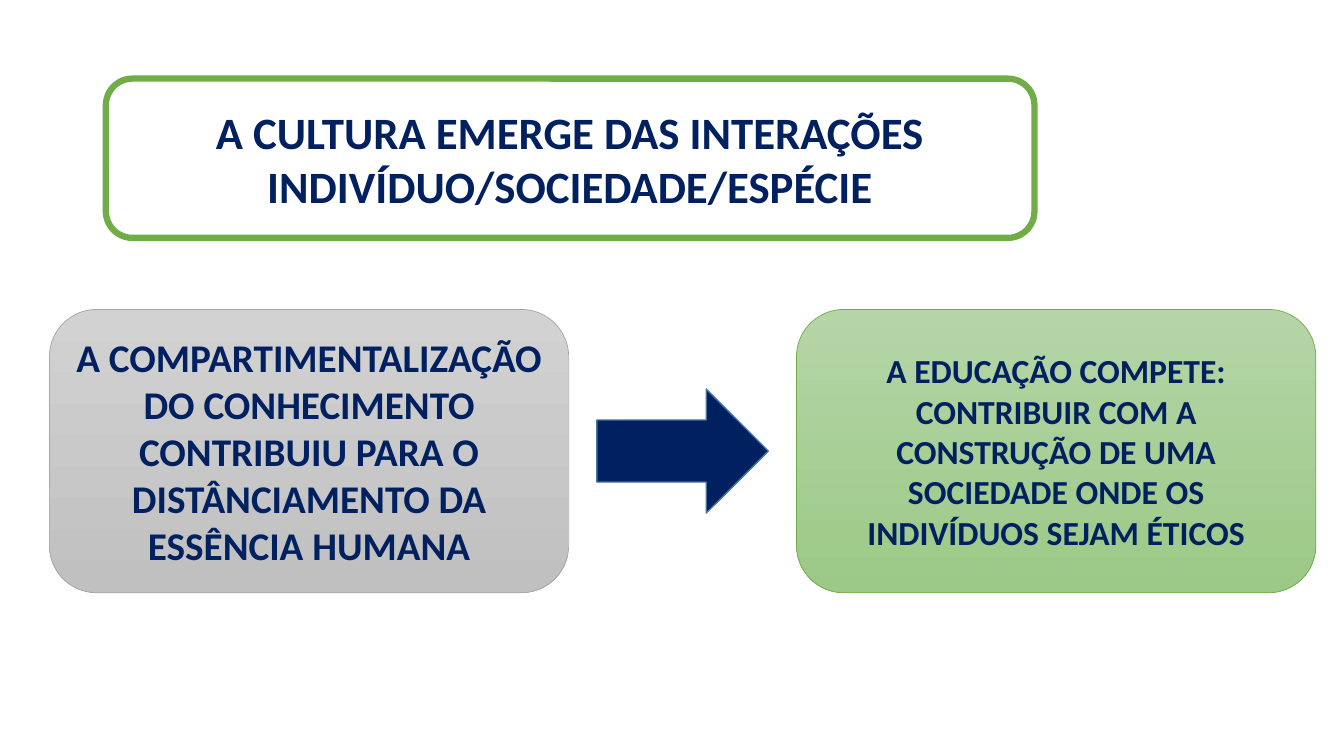
import pptx
import pptx.util
import pptx.dml.color
import pptx.enum.shapes
import pptx.enum.text

Inches = pptx.util.Inches
RGBColor = pptx.dml.color.RGBColor
Shapes = pptx.enum.shapes.MSO_SHAPE

WHITE = RGBColor(0xFF, 0xFF, 0xFF)
NAVY = RGBColor(0x00, 0x20, 0x60)
STEEL = RGBColor(0x43, 0x73, 0x9E)
GREEN = RGBColor(0x70, 0xAD, 0x47)
GREEN_TOP = RGBColor(0xB5, 0xD5, 0xA7)
GREEN_BOTTOM = RGBColor(0x9C, 0xC9, 0x87)
GRAY = RGBColor(0xA5, 0xA5, 0xA5)
GRAY_TOP = RGBColor(0xD2, 0xD2, 0xD2)
GRAY_BOTTOM = RGBColor(0xC0, 0xC0, 0xC0)


def add_shape(slide, kind, box, fills, line_color, line_width):
    """Add a preset shape; two fill colours make a top-to-bottom gradient."""
    shape = slide.shapes.add_shape(kind, *(Inches(length) for length in box))
    shape.shadow.inherit = False
    if len(fills) == 1:
        shape.fill.solid()
        shape.fill.fore_color.rgb = fills[0]
    else:
        shape.fill.gradient()
        shape.fill.gradient_angle = 270
        for stop, color, position in zip(shape.fill.gradient_stops, fills, (0, 1)):
            stop.color.rgb = color
            stop.position = position
    shape.line.color.rgb = line_color
    shape.line.width = pptx.util.Pt(line_width)
    return shape


def add_text_box(slide, box, text, size, fills, line_color, line_width):
    """Add a rounded box with centred bold text."""
    shape = add_shape(slide, Shapes.ROUNDED_RECTANGLE, box, fills, line_color, line_width)
    frame = shape.text_frame
    frame.word_wrap = True
    frame.vertical_anchor = pptx.enum.text.MSO_ANCHOR.MIDDLE
    paragraph = frame.paragraphs[0]
    paragraph.text = text
    paragraph.alignment = pptx.enum.text.PP_ALIGN.CENTER
    font_format = {"name": "Calibri", "size": pptx.util.Pt(size), "bold": True}
    for name, value in font_format.items():
        setattr(paragraph.font, name, value)
    paragraph.font.color.rgb = NAVY


def add_cause_and_task(slide, left, top, width, height):
    """Place the two boxes at the ends of the row and the arrow between them."""
    box_width, arrow_width, arrow_height = 5.15, 1.7, 1.23
    # Education's task, on the right
    add_text_box(
        slide, (left + width - box_width, top, box_width, height),
        "A EDUCAÇÃO COMPETE: CONTRIBUIR COM A CONSTRUÇÃO DE UMA SOCIEDADE "
        "ONDE OS INDIVÍDUOS SEJAM ÉTICOS",
        24, (GREEN_TOP, GREEN_BOTTOM), GREEN, 0.5)
    # Split knowledge, on the left
    add_text_box(
        slide, (left, top, box_width, height),
        "A COMPARTIMENTALIZAÇÃO DO CONHECIMENTO CONTRIBUIU PARA O "
        "DISTÂNCIAMENTO DA ESSÊNCIA HUMANA",
        28, (GRAY_TOP, GRAY_BOTTOM), GRAY, 0.5)
    # Arrow, centred in the row
    arrow_box = (left + (width - arrow_width) / 2, top + (height - arrow_height) / 2,
                 arrow_width, arrow_height)
    add_shape(slide, Shapes.RIGHT_ARROW, arrow_box, (NAVY,), STEEL, 1)


def main():
    presentation = pptx.Presentation()
    presentation.slide_width = Inches(13.33)
    presentation.slide_height = Inches(7.5)
    slide = presentation.slides.add_slide(presentation.slide_layouts[6])
    # Main statement
    add_text_box(
        slide, (1.05, 0.78, 9.21, 1.58),
        "A CULTURA EMERGE DAS INTERAÇÕES INDIVÍDUO/SOCIEDADE/ESPÉCIE",
        32, (WHITE,), GREEN, 4.5)
    add_cause_and_task(slide, 0.49, 3.07, 12.56, 2.81)
    presentation.save("out.pptx")


if __name__ == "__main__":
    main()
